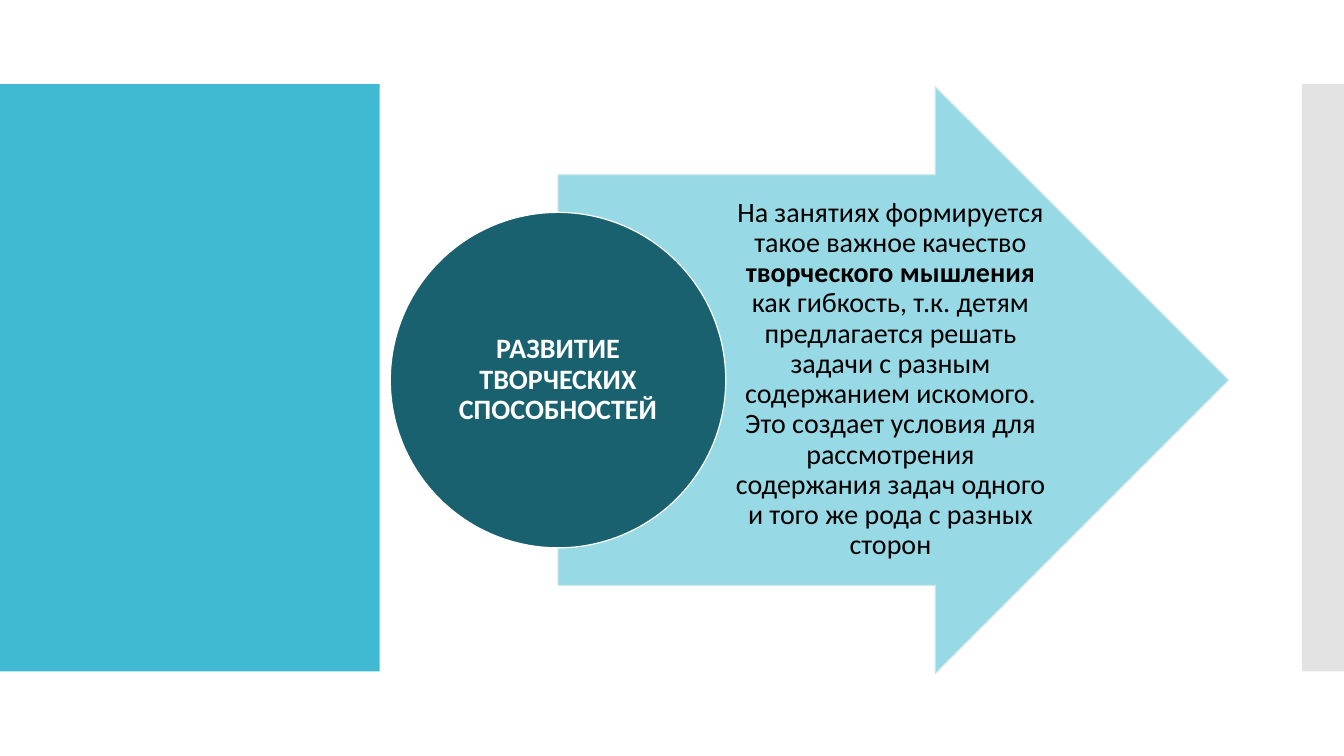
from lxml import etree
from pptx import Presentation
from pptx.dml.color import RGBColor
from pptx.enum import shapes, text
from pptx.oxml import ns
from pptx.util import Pt

COLORS = {
    "side": "40BAD2",
    "edge": "C8C8C8",
    "arrow": "8CD6E4",
    "arrow_line": "CFE7EE",
    "circle": "1A616F",
    "white": "FFFFFF",
    "black": "000000",
}


def paint(fill, color, opacity=100):
    fill.solid()
    fill.fore_color.rgb = RGBColor.from_string(COLORS[color])
    if opacity < 100:
        # The color format has no public opacity setting
        element = fill._xPr.find(".//" + ns.qn("a:srgbClr"))
        etree.SubElement(element, ns.qn("a:alpha")).set("val", str(opacity * 1000))


def add_figure(slide, kind, box, color, line=None, opacity=100):
    shape = slide.shapes.add_shape(kind, *map(Pt, box))
    shape.shadow.inherit = False
    paint(shape.fill, color, opacity)
    if line:
        shape.line.width = Pt(0.85)
        paint(shape.line.fill, line, opacity)
    else:
        shape.line.fill.background()
    return shape


def write(shape, runs, color, margins):
    """Fill a shape with one centred paragraph of (wording, bold) runs."""
    frame = shape.text_frame
    frame.word_wrap = True
    frame.vertical_anchor = text.MSO_ANCHOR.MIDDLE
    frame.margin_left, frame.margin_top, frame.margin_right, frame.margin_bottom = map(Pt, margins)
    paragraph = frame.paragraphs[0]
    paragraph.alignment = text.PP_ALIGN.CENTER
    paragraph.line_spacing = 0.9
    paragraph.font.name = "Calibri"
    paragraph.font.size = Pt(20)
    paragraph.font.color.rgb = RGBColor.from_string(COLORS[color])
    for wording, bold in runs:
        run = paragraph.add_run()
        run.text = wording
        run.font.bold = bold


def main():
    presentation = Presentation()
    presentation.slide_width, presentation.slide_height = Pt(960), Pt(540)
    slide = presentation.slides.add_slide(presentation.slide_layouts[6])
    kinds = shapes.MSO_SHAPE

    # Side panels
    add_figure(slide, kinds.RECTANGLE, (0, 60, 271.2, 419.5), "side")
    add_figure(slide, kinds.RECTANGLE, (930, 60, 30, 419.5), "edge", opacity=50)

    # Arrow with the explanation
    arrow = add_figure(slide, kinds.RIGHT_ARROW, (398.6, 62, 479, 419), "arrow", "arrow_line", 90)
    arrow.adjustments[0] = 0.7
    arrow.adjustments[1] = 0.5
    explanation = slide.shapes.add_textbox(*map(Pt, (518.4, 124.6, 233.3, 293)))
    write(explanation, [
        ("На занятиях формируется такое важное качество ", False),
        ("творческого мышления ", True),
        ("как гибкость, т.к. детям предлагается решать задачи с разным содержанием искомого. "
         "Это создает условия для рассмотрения содержания задач одного и того же рода "
         "с разных сторон", False),
    ], "black", (4.3, 0.7, 2.2, 0.7))

    # Circle with the topic
    circle = add_figure(slide, kinds.OVAL, (278.8, 151.7, 239.6, 239.6), "circle", "white")
    write(circle, [("РАЗВИТИЕ ТВОРЧЕСКИХ СПОСОБНОСТЕЙ", True)], "white", (0.7,) * 4)

    presentation.save("out.pptx")


if __name__ == "__main__":
    main()
